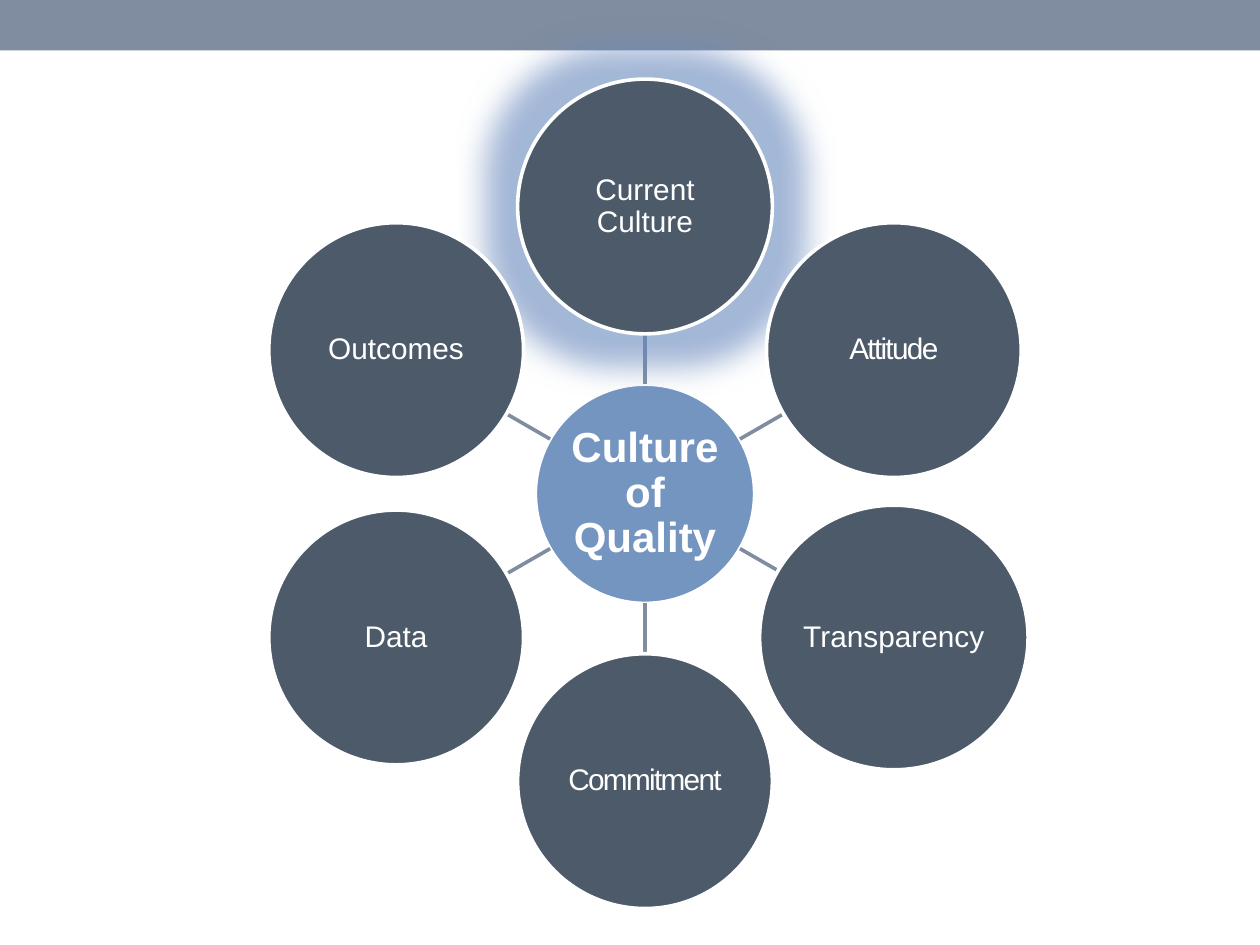
"""Build a hub-and-spoke slide about a culture of quality."""
from dataclasses import dataclass
from math import cos, radians, sin

from lxml.etree import SubElement
from pptx import Presentation
from pptx.dml.color import RGBColor
from pptx.enum.shapes import MSO_CONNECTOR, MSO_SHAPE
from pptx.enum.text import MSO_ANCHOR, PP_ALIGN
from pptx.oxml.ns import qn
from pptx.shapes.autoshape import Shape
from pptx.slide import Slide
from pptx.util import Pt

WHITE = RGBColor(0xFF, 0xFF, 0xFF)
GREY = RGBColor(0x80, 0x8D, 0xA0)
SLATE = RGBColor(0x4C, 0x5A, 0x6A)
BLUE = RGBColor(0x75, 0x95, 0xC1)
GLOW = RGBColor(0x66, 0x87, 0xBC)

CENTER_X, CENTER_Y = 368.6, 282.2
RING_RADIUS = 164.2
HUB_SIZE = 125.3
LINE_WIDTH = 2.08
ANGLE_STEP = 60


@dataclass(frozen=True)
class Topic:
    """A labelled circle on the ring."""

    label: str
    width: float = 145.6
    height: float = 145.6
    spacing: int = 0
    glow: float = 0


TOPICS = (
    Topic("Current Culture", glow=36),
    Topic("Attitude", spacing=-100),
    Topic("Transparency", width=153.4, height=151.2),
    Topic("Commitment", spacing=-100),
    Topic("Data"),
    Topic("Outcomes"),
)


def apply_format(target: object, values: dict) -> None:
    """Set every named attribute on the target."""
    for name, value in values.items():
        setattr(target, name, value)


def polar_point(radius: float, angle: float) -> tuple[float, float]:
    """Return the point at a clockwise angle from the top of the hub."""
    turn = radians(angle)
    return CENTER_X + radius * sin(turn), CENTER_Y - radius * cos(turn)


def draw_bar(page: Slide, width: int) -> None:
    """Draw the plain band along the top edge."""
    bar = page.shapes.add_shape(MSO_SHAPE.RECTANGLE, 0, 0, width, Pt(28.8))
    bar.shadow.inherit = False
    bar.fill.solid()
    bar.fill.fore_color.rgb = GREY
    bar.line.fill.background()


def draw_circle(page: Slide, middle: tuple[float, float], topic: Topic,
                color: RGBColor, inset: float, font: dict) -> Shape:
    """Draw a white-edged circle with its centred label."""
    left, top = middle[0] - topic.width / 2, middle[1] - topic.height / 2
    circle = page.shapes.add_shape(
        MSO_SHAPE.OVAL, Pt(left), Pt(top), Pt(topic.width), Pt(topic.height))
    circle.shadow.inherit = False
    circle.fill.solid()
    circle.fill.fore_color.rgb = color
    circle.line.color.rgb = WHITE
    circle.line.width = Pt(LINE_WIDTH)
    box = circle.text_frame
    margins = ("margin_left", "margin_top", "margin_right", "margin_bottom")
    apply_format(box, {"word_wrap": True, "vertical_anchor": MSO_ANCHOR.MIDDLE,
                       **dict.fromkeys(margins, Pt(inset))})
    para = box.paragraphs[0]
    apply_format(para, {"alignment": PP_ALIGN.CENTER, "line_spacing": 0.9})
    span = para.add_run()
    span.text = topic.label
    apply_format(span.font, {"name": "Arial", **font})
    span.font.color.rgb = WHITE
    if topic.spacing:
        span.font._element.set("spc", str(topic.spacing))
    return circle


def add_glow(circle: Shape, radius: float) -> None:
    """Surround a circle with a translucent glow."""
    effects = circle.element.spPr.find(qn("a:effectLst"))
    glow = SubElement(effects, qn("a:glow"), rad=str(Pt(radius)))
    color = SubElement(glow, qn("a:srgbClr"), val=str(GLOW))
    SubElement(color, qn("a:alpha"), val="60000")


def draw_spoke(page: Slide, angle: float, end_radius: float) -> None:
    """Draw the line from the hub's edge to a topic's edge."""
    start, end = polar_point(HUB_SIZE / 2, angle), polar_point(end_radius, angle)
    spoke = page.shapes.add_connector(
        MSO_CONNECTOR.STRAIGHT, *(Pt(value) for value in start + end))
    spoke.line.color.rgb = GREY
    spoke.line.width = Pt(LINE_WIDTH)
    SubElement(spoke.element.spPr, qn("a:effectLst"))


def main() -> None:
    """Build and save the deck."""
    deck = Presentation()
    apply_format(deck, {"slide_width": Pt(720), "slide_height": Pt(540)})
    page = deck.slides.add_slide(deck.slide_layouts[6])
    draw_bar(page, deck.slide_width)
    hub = Topic("Culture of Quality", HUB_SIZE, HUB_SIZE)
    draw_circle(page, (CENTER_X, CENTER_Y), hub, BLUE, 1.4,
                {"size": Pt(24), "bold": True})
    for index, topic in enumerate(TOPICS):
        angle = index * ANGLE_STEP
        draw_spoke(page, angle, RING_RADIUS - topic.width / 2)
        circle = draw_circle(page, polar_point(RING_RADIUS, angle), topic,
                             SLATE, 0.7, {"size": Pt(17), "bold": False})
        if topic.glow:
            add_glow(circle, topic.glow)
    deck.save("out.pptx")


if __name__ == "__main__":
    main()
